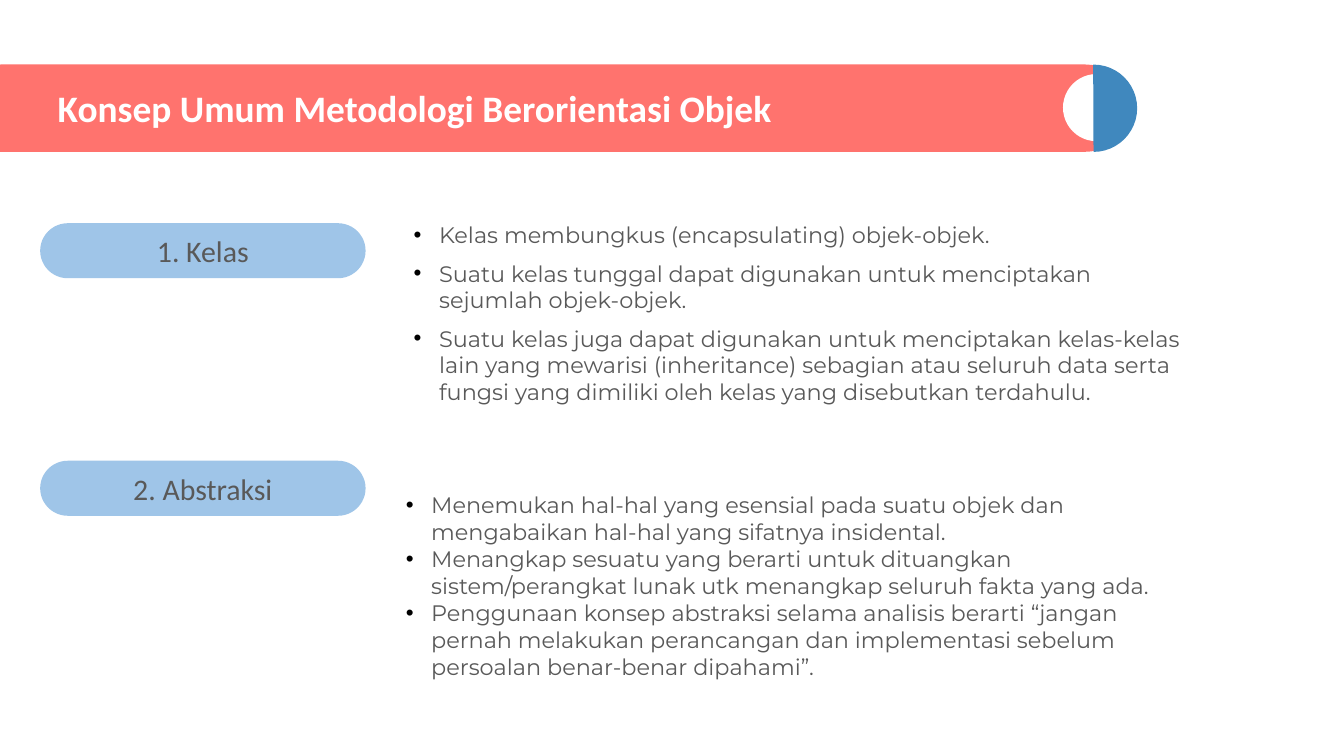
from lxml.etree import SubElement
from pptx import Presentation
from pptx.dml.color import RGBColor
from pptx.enum.shapes import MSO_SHAPE as SHAPE
from pptx.enum.text import MSO_ANCHOR as ANCHOR, MSO_AUTO_SIZE as AUTO, PP_ALIGN as ALIGN
from pptx.oxml.ns import qn
from pptx.util import Cm, Pt

COLORS = {
    "banner": "FF736E",
    "white": "FFFFFF",
    "half": "4088BE",
    "pill": "9FC5E8",
    "text": "595959",
    "bullet": "000000",
}


def write(tf, *lines, font="Calibri", size=16, color="text", bold=False,
          align=ALIGN.LEFT, anchor=ANCHOR.MIDDLE, bullet=False, after=0):
    tf.word_wrap = True
    tf.auto_size = AUTO.NONE
    tf.vertical_anchor = anchor
    tf.margin_left = tf.margin_right = tf.margin_top = tf.margin_bottom = Cm(0.25)
    for i, line in enumerate(lines):
        p = tf.add_paragraph() if i else tf.paragraphs[0]
        p.alignment = align
        p.space_after = Pt(after)
        r = p.add_run()
        r.text = line
        r.font.name = font
        r.font.size = Pt(size)
        r.font.bold = bold
        r.font.color.rgb = RGBColor.from_string(COLORS[color])
        if bullet:
            pPr = p._p.get_or_add_pPr()
            pPr.set("marL", str(Cm(0.48)))
            pPr.set("indent", str(Cm(-0.48)))
            clr = SubElement(pPr, qn("a:buClr"))
            SubElement(clr, qn("a:srgbClr"), val=COLORS["bullet"])
            SubElement(pPr, qn("a:buFont"), typeface="Arial")
            SubElement(pPr, qn("a:buChar"), char="•")


def add_block(s, kind, x, y, w, h, color):
    sp = s.shapes.add_shape(kind, Cm(x), Cm(y), Cm(w), Cm(h))
    sp.shadow.inherit = False
    sp.fill.solid()
    sp.fill.fore_color.rgb = RGBColor.from_string(COLORS[color])
    sp.line.fill.background()
    return sp


prs = Presentation()
prs.slide_width, prs.slide_height = Cm(25.4), Cm(14.29)
s = prs.slides.add_slide(prs.slide_layouts[5])

banner = add_block(s, SHAPE.ROUNDED_RECTANGLE, -0.81, 1.22, 22.15, 1.65, "banner")
banner.adjustments[0] = 0.5
add_block(s, SHAPE.OVAL, 20.09, 1.4, 1.27, 1.27, "white")
half = add_block(s, SHAPE.PIE, 19.84, 1.22, 1.65, 1.65, "half")
half.adjustments[0], half.adjustments[1] = 53.67, 162
half.rotation = 180

title = s.shapes.title
title.left, title.top, title.width, title.height = Cm(0.84), Cm(1.52), Cm(18.82), Cm(1.04)
write(title.text_frame, "Konsep Umum Metodologi Berorientasi Objek",
      size=20, color="white", bold=True)
s.shapes._spTree.append(title._element)

sections = [
    ("1. Kelas", 4.22, (7.57, 3.94, 0.86), 6, [
        "Kelas membungkus (encapsulating) objek-objek.",
        "Suatu kelas tunggal dapat digunakan untuk menciptakan sejumlah objek-objek.",
        "Suatu kelas juga dapat digunakan untuk menciptakan kelas-kelas lain yang mewarisi "
        "(inheritance) sebagian atau seluruh data serta fungsi yang dimiliki oleh kelas "
        "yang disebutkan terdahulu.",
    ]),
    ("2. Abstraksi", 8.71, (7.42, 9.04, 1.5), 0, [
        "Menemukan hal-hal yang esensial pada suatu objek dan mengabaikan hal-hal yang "
        "sifatnya insidental.",
        "Menangkap sesuatu yang berarti untuk dituangkan sistem/perangkat lunak utk "
        "menangkap seluruh fakta yang ada.",
        "Penggunaan konsep abstraksi selama analisis berarti “jangan pernah melakukan "
        "perancangan dan implementasi sebelum persoalan benar-benar dipahami”.",
    ]),
]
for heading, top, (x, y, h), after, points in sections:
    pill = add_block(s, SHAPE.ROUNDED_RECTANGLE, 0.76, top, 6.15, 1.04, "pill")
    pill.adjustments[0] = 0.5
    write(pill.text_frame, heading, align=ALIGN.CENTER)
    box = s.shapes.add_textbox(Cm(x), Cm(y), Cm(15.34), Cm(h))
    write(box.text_frame, *points, font="Montserrat", size=12,
          anchor=ANCHOR.TOP, bullet=True, after=after)

prs.save("out.pptx")
